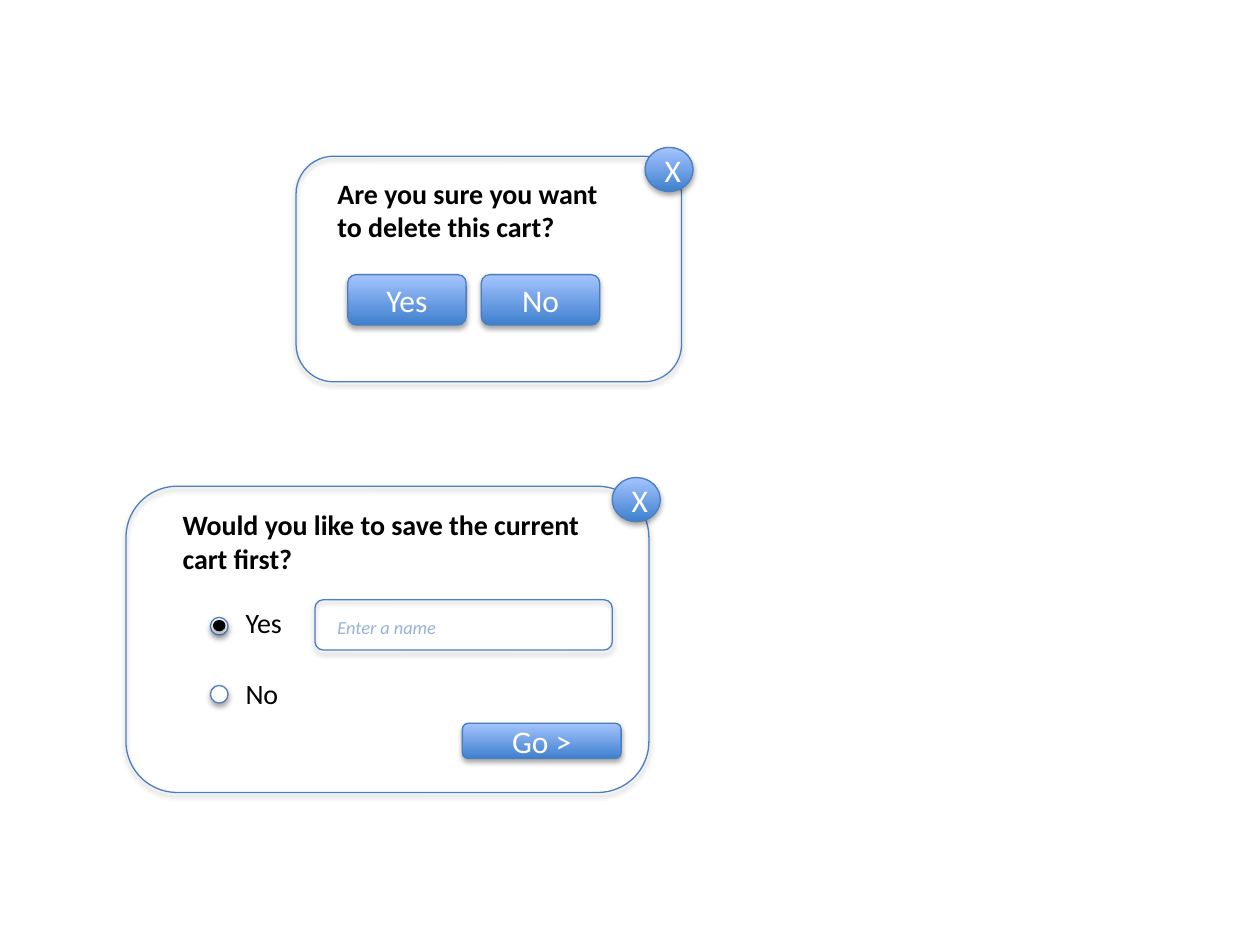
from lxml.etree import SubElement
from pptx import Presentation
from pptx.dml.color import RGBColor
from pptx.enum.shapes import MSO_SHAPE
from pptx.enum.text import MSO_ANCHOR, MSO_AUTO_SIZE, PP_ALIGN
from pptx.oxml.ns import qn
from pptx.util import Inches, Pt

COLORS = {
    "outline": "4B7EBC",
    "button_bottom": "3F80CE",
    "button_top": "A4C4FF",
    "hint": "95B3D7",
    "white": "FFFFFF",
    "black": "000000",
}


def color(name):
    """Return the named colour."""
    return RGBColor.from_string(COLORS[name])


def add_shadow(shape):
    """Give a shape a soft shadow that falls straight down."""
    shape.shadow.inherit = False
    effects = shape._element.spPr.find(qn("a:effectLst"))
    shadow = SubElement(effects, qn("a:outerShdw"), blurRad=str(Pt(3.1)),
                        dist=str(Pt(1.8)), dir="5400000", rotWithShape="0")
    shade = SubElement(shadow, qn("a:srgbClr"), val=COLORS["black"])
    SubElement(shade, qn("a:alpha"), val="35000")


def add_outline(slide, kind, left, top, width, height, fill=None, line="outline"):
    """Add a shadowed preset shape with an optional solid fill and line."""
    shape = slide.shapes.add_shape(kind, Inches(left), Inches(top), Inches(width), Inches(height))
    if fill:
        shape.fill.solid()
        shape.fill.fore_color.rgb = color(fill)
    else:
        shape.fill.background()
    if line:
        shape.line.color.rgb = color(line)
        shape.line.width = Pt(0.75)
    else:
        shape.line.fill.background()
    add_shadow(shape)
    return shape


def format_text(frame, text, size, text_color, bold=False, italic=False):
    """Write one formatted paragraph and return it."""
    frame.word_wrap = True
    paragraph = frame.paragraphs[0]
    paragraph.text = text
    font = paragraph.font
    font.name, font.size, font.bold, font.italic = "Calibri", Pt(size), bold, italic
    font.color.rgb = color(text_color)
    return paragraph


def add_button(slide, text, left, top, width, height, kind=MSO_SHAPE.ROUNDED_RECTANGLE):
    """Add a gradient button with a centred caption."""
    button = add_outline(slide, kind, left, top, width, height)
    button.fill.gradient()
    button.fill.gradient_angle = 90
    for stop, name in zip(button.fill.gradient_stops, ("button_bottom", "button_top")):
        stop.color.rgb = color(name)
    button.text_frame.vertical_anchor = MSO_ANCHOR.MIDDLE
    format_text(button.text_frame, text, 18, "white").alignment = PP_ALIGN.CENTER


def add_label(slide, text, left, top, width, height, size=16, text_color="black", **style):
    """Add a text box that grows with its text."""
    box = slide.shapes.add_textbox(Inches(left), Inches(top), Inches(width), Inches(height))
    box.text_frame.auto_size = MSO_AUTO_SIZE.SHAPE_TO_FIT_TEXT
    format_text(box.text_frame, text, size, text_color, **style)


def add_dialog(slide, left, top, width, height):
    """Add a dialog frame with a close button on its top right corner."""
    add_outline(slide, MSO_SHAPE.ROUNDED_RECTANGLE, left, top, width, height)
    add_button(slide, "X", left + width - 0.29, top - 0.07, 0.38, 0.35, MSO_SHAPE.OVAL)


def add_radio_option(slide, text, label_top, circle_top, selected=False):
    """Add a radio circle with its label."""
    add_label(slide, text, 1.85, label_top, 0.92, 0.37)
    add_outline(slide, MSO_SHAPE.OVAL, 1.67, circle_top, 0.14, 0.14, "white")
    if selected:
        add_outline(slide, MSO_SHAPE.OVAL, 1.69, circle_top + 0.02, 0.1, 0.09, "black", None)


def add_save_dialog(slide):
    """Build the dialog that offers to save the cart."""
    add_dialog(slide, 1, 3.86, 4.15, 2.43)
    add_label(slide, "Would you like to save the current cart first?",
              1.35, 3.98, 3.41, 0.64, bold=True)
    add_button(slide, "Go >", 3.67, 5.74, 1.26, 0.28)
    add_outline(slide, MSO_SHAPE.ROUNDED_RECTANGLE, 2.5, 4.76, 2.36, 0.4)
    add_radio_option(slide, "Yes", 4.76, 4.9, selected=True)
    add_radio_option(slide, "No", 5.32, 5.44)
    add_label(slide, "Enter a name", 2.58, 4.84, 1.55, 0.28, 10.5, "hint", italic=True)


def add_delete_dialog(slide):
    """Build the dialog that confirms deleting the cart."""
    add_dialog(slide, 2.35, 1.24, 3.06, 1.79)
    add_label(slide, "Are you sure you want to delete this cart?",
              2.58, 1.35, 2.44, 0.64, bold=True)
    for index, answer in enumerate(("Yes", "No")):
        add_button(slide, answer, 2.76 + index * 1.06, 2.18, 0.94, 0.4)


def main():
    """Build and save the presentation."""
    presentation = Presentation()
    presentation.slide_width, presentation.slide_height = Inches(10), Inches(7.5)
    slide = presentation.slides.add_slide(presentation.slide_layouts[6])
    add_save_dialog(slide)
    add_delete_dialog(slide)
    presentation.save("out.pptx")


if __name__ == "__main__":
    main()
